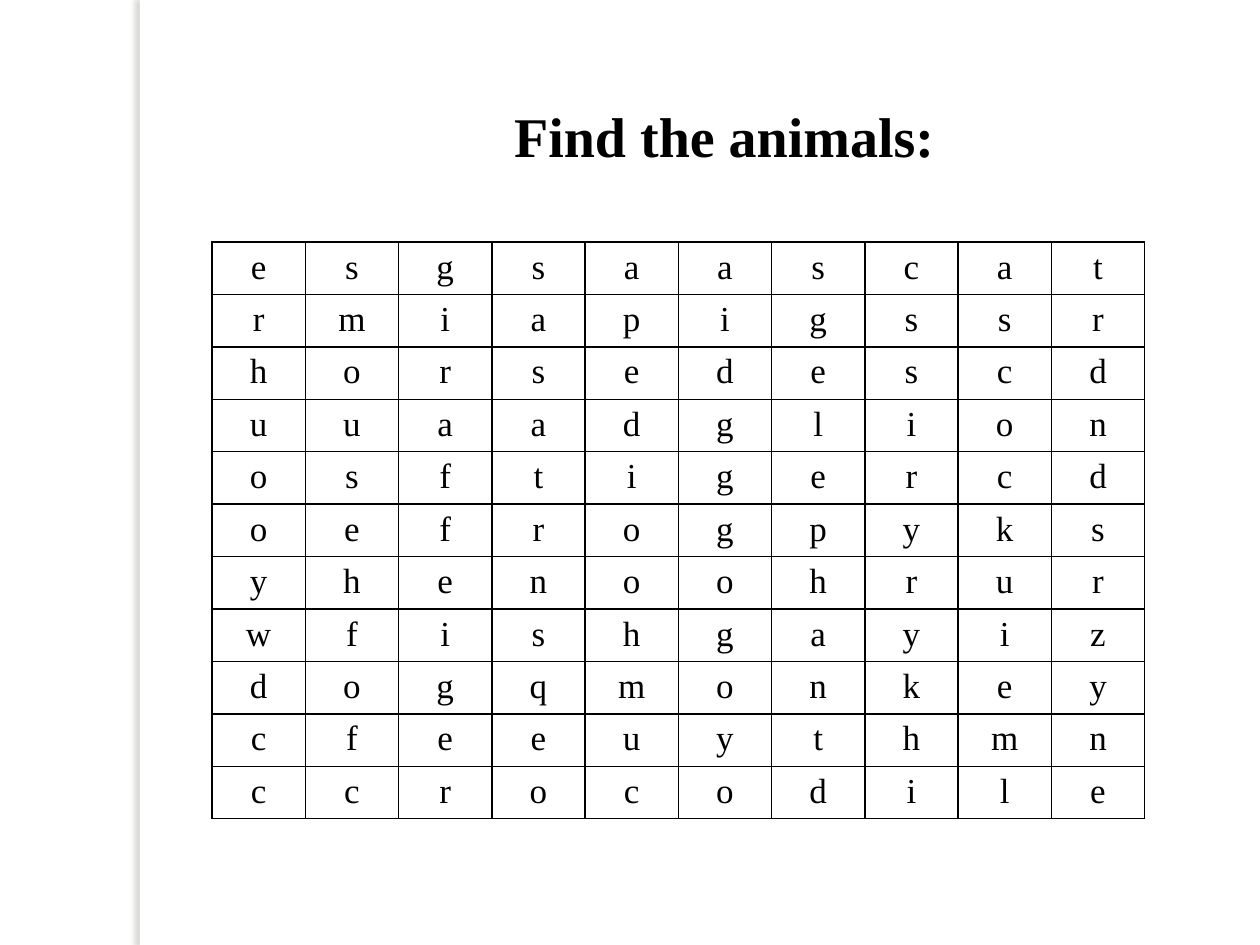
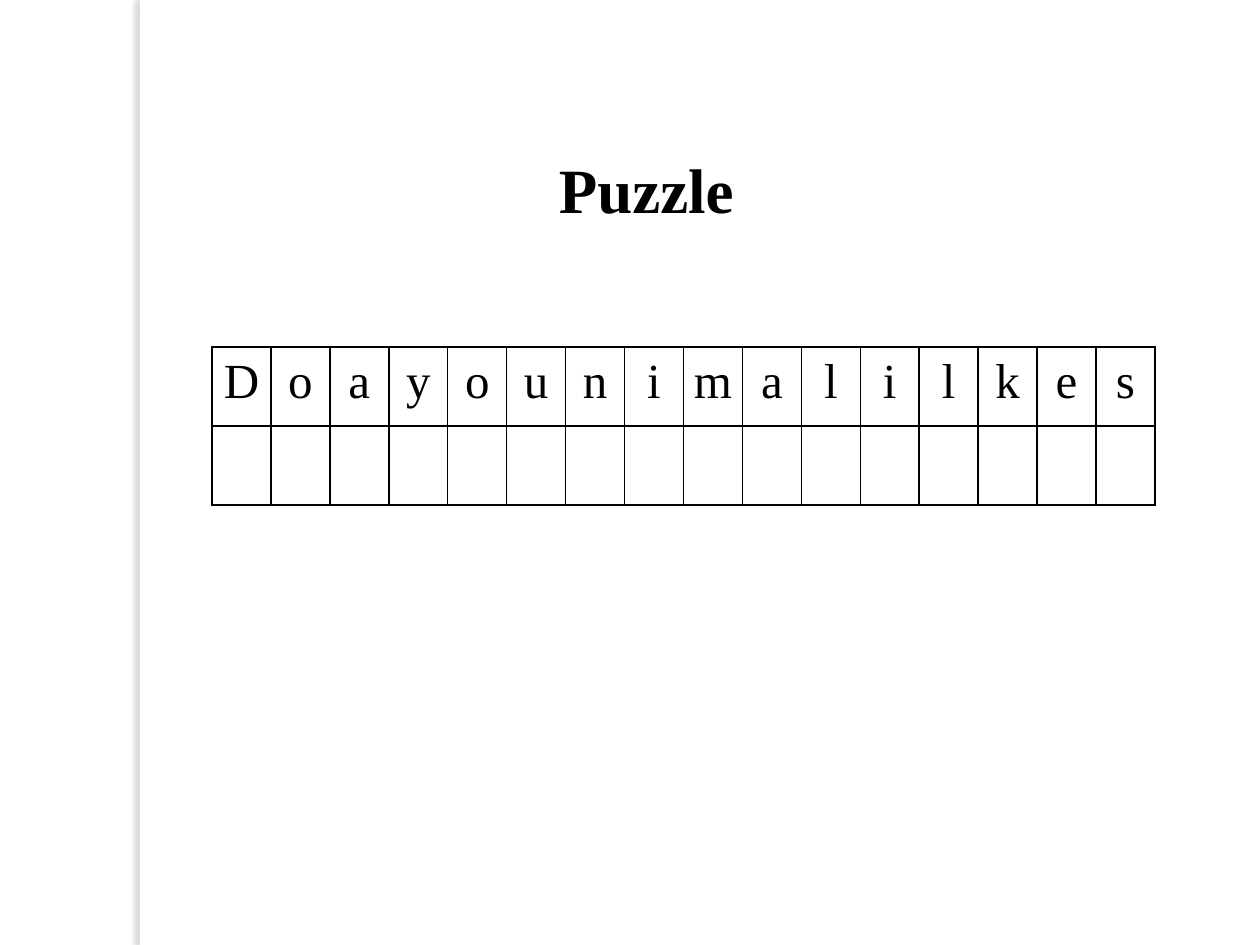
from lxml import etree
from pptx import Presentation
from pptx.dml.color import RGBColor
from pptx.enum.shapes import MSO_SHAPE
from pptx.enum.text import MSO_ANCHOR, PP_ALIGN
from pptx.oxml.ns import qn
from pptx.util import Pt

RECT = MSO_SHAPE.RECTANGLE
MIDDLE = MSO_ANCHOR.MIDDLE
CENTER = PP_ALIGN.CENTER

PX_PER_INCH = 126
SLIDE_W, SLIDE_H = 1260, 945
FONT = "Times New Roman"
BLACK, WHITE, SHADOW = "000000", "FFFFFF", "736F63"
TABLE_LEFT = 212

ANIMAL_ROWS = [
    "esgsaascat",
    "rmiapigssr",
    "horsedescd",
    "uuaadglion",
    "osftigercd",
    "oefrogpyks",
    "yhenoohrur",
    "wfishgayiz",
    "dogqmonkey",
    "cfeeuythmn",
    "ccrocodile",
]
PUZZLE_LETTERS = "Doayounimalilkes"
PUZZLE_ROWS = [PUZZLE_LETTERS, [""] * len(PUZZLE_LETTERS)]


def px(n):
    return round(n * 914400 / PX_PER_INCH)


def color(hex_text):
    return RGBColor.from_string(hex_text)


def style_paragraph(p, size, bold=False):
    p.alignment = CENTER
    p.font.size = Pt(size)
    for r in p.runs:
        r.font.name = FONT
        r.font.size = Pt(size)
        r.font.bold = bold
        r.font.color.rgb = color(BLACK)


def add_side_band(slide):
    """White strip that casts a soft shadow to its left."""
    sp = slide.shapes.add_shape(RECT, px(140), 0, px(10), px(SLIDE_H))
    sp.fill.solid()
    sp.fill.fore_color.rgb = color(WHITE)
    sp.line.fill.background()
    sp.shadow.inherit = False
    effects = sp._element.spPr.find(qn("a:effectLst"))
    shadow = etree.SubElement(
        effects, qn("a:outerShdw"), blurRad=str(Pt(3)), dist=str(Pt(3)),
        dir=str(180 * 60000), algn="ctr", rotWithShape="0")
    clr = etree.SubElement(shadow, qn("a:srgbClr"), val=SHADOW)
    etree.SubElement(clr, qn("a:alpha"), val="25000")


def add_title(slide, text, left, top, width, height, size, bottom_inset=6):
    box = slide.shapes.add_textbox(px(left), px(top), px(width), px(height))
    tf = box.text_frame
    tf.word_wrap = True
    tf.vertical_anchor = MIDDLE
    tf.margin_bottom = px(bottom_inset)
    tf.text = text
    style_paragraph(tf.paragraphs[0], size, bold=True)


def set_borders(cell):
    tc_pr = cell._tc.get_or_add_tcPr()
    for side in ("lnL", "lnR", "lnT", "lnB"):
        ln = etree.SubElement(tc_pr, qn(f"a:{side}"), w=str(Pt(1)))
        fill = etree.SubElement(ln, qn("a:solidFill"))
        etree.SubElement(fill, qn("a:srgbClr"), val=BLACK)


def add_letter_grid(slide, rows, top, width, height, size):
    n_rows, n_cols = len(rows), len(rows[0])
    table = slide.shapes.add_table(
        n_rows, n_cols, px(TABLE_LEFT), px(top), px(width), px(height)).table
    table.first_row = False
    table.horz_banding = False
    for i, letters in enumerate(rows):
        for j, letter in enumerate(letters):
            cell = table.cell(i, j)
            cell.margin_left = cell.margin_right = px(9)
            cell.margin_top = cell.margin_bottom = 0
            set_borders(cell)
            cell.fill.background()
            p = cell.text_frame.paragraphs[0]
            p.text = letter
            p.line_spacing = 1.15
            style_paragraph(p, size)


def add_slide(prs):
    slide = prs.slides.add_slide(prs.slide_layouts[6])
    slide.background.fill.solid()
    slide.background.fill.fore_color.rgb = color(WHITE)
    add_side_band(slide)
    return slide


def main():
    prs = Presentation()
    prs.slide_width, prs.slide_height = px(SLIDE_W), px(SLIDE_H)

    slide = add_slide(prs)
    add_letter_grid(slide, ANIMAL_ROWS, 242, 933, 577, 20)
    add_title(slide, "Find the animals:", 189, 94, 1071, 118, 32, bottom_inset=42)

    slide = add_slide(prs)
    add_letter_grid(slide, PUZZLE_ROWS, 347, 943, 158, 28)
    add_title(slide, "Puzzle", 305, 144, 683, 89, 36)

    prs.save("out.pptx")


if __name__ == "__main__":
    main()
